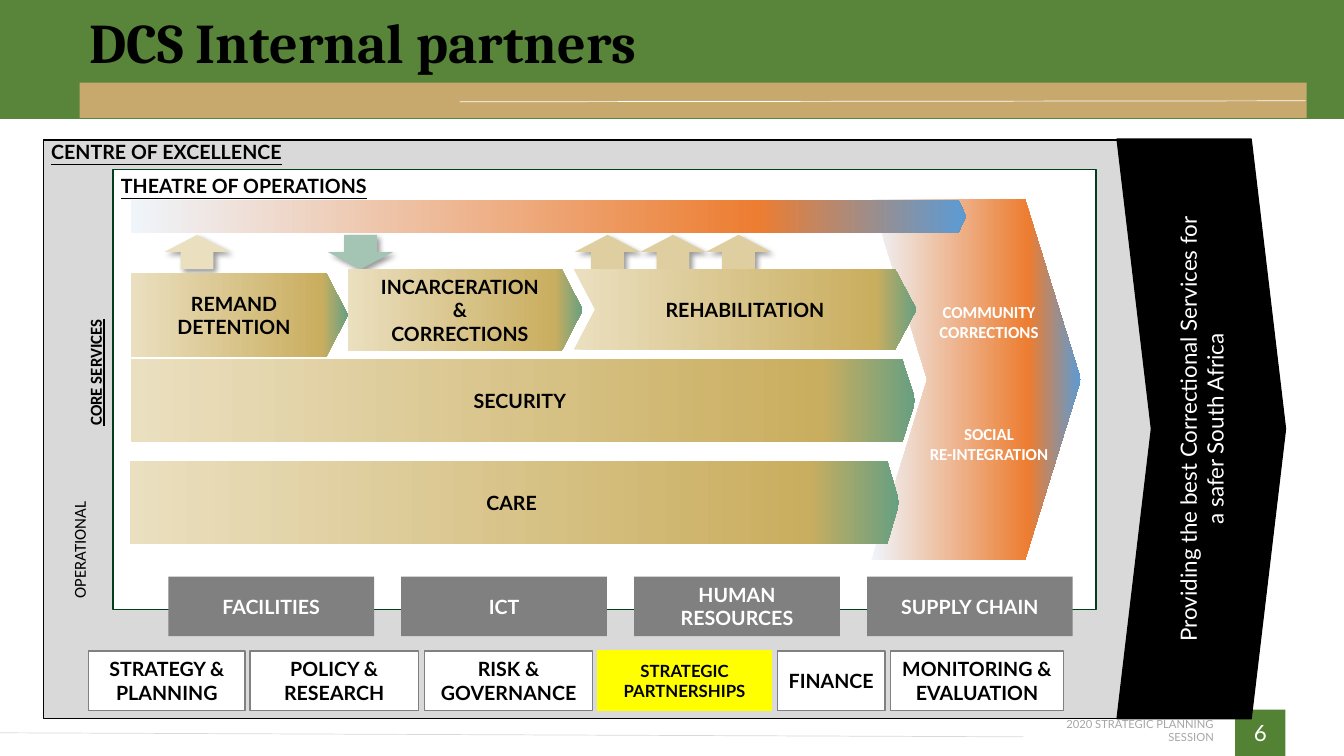
import copy
import lxml.etree
import pptx
import pptx.util
import pptx.dml.color
import pptx.enum.shapes
import pptx.enum.text
import pptx.oxml
import pptx.oxml.ns

RGB = pptx.dml.color.RGBColor
Pt = pptx.util.Pt
MSO = pptx.enum.shapes.MSO_SHAPE
ALIGN = pptx.enum.text.PP_ALIGN
ANCHOR = pptx.enum.text.MSO_ANCHOR
qn = pptx.oxml.ns.qn

BLACK = RGB(0x00, 0x00, 0x00)
WHITE = RGB(0xFF, 0xFF, 0xFF)
YELLOW = RGB(0xFF, 0xFF, 0x00)
GREY = RGB(0x80, 0x80, 0x80)
SILVER = RGB(0xD9, 0xD9, 0xD9)
FOOTER = RGB(0xA6, 0xA6, 0xA6)
GREEN = RGB(0x54, 0x82, 0x35)
BAND = RGB(0x58, 0x85, 0x39)
FOREST = RGB(0x00, 0x3E, 0x1D)
TAN = RGB(0xC7, 0xA9, 0x6E)
CREAM = RGB(0xEA, 0xDF, 0xBF)
SAND = RGB(0xDF, 0xCE, 0x9F)
SAGE = RGB(0xA4, 0xC5, 0xB3)
GOLD = [(0, CREAM), (0.88, RGB(0xCA, 0xAE, 0x5F)), (1, RGB(0x67, 0x9F, 0x81))]
FLAME = [(0, RGB(0xEF, 0xF5, 0xFB)), (0.75, RGB(0xED, 0x7D, 0x31)), (1, RGB(0x5B, 0x9B, 0xD5))]

prs = pptx.Presentation()
prs.slide_width = pptx.util.Inches(13.33)
prs.slide_height = pptx.util.Inches(7.5)
COL = prs.slide_width / 133.3
ROW = prs.slide_height / 75
s = prs.slides.add_slide(prs.slide_layouts[6])


def add_box(kind, x, y, w, h, fill=None, line=None, adj=None):
    box = [round(v) for v in (x * COL, y * ROW, w * COL, h * ROW)]
    if kind is None:
        return s.shapes.add_textbox(*box)
    sp = s.shapes.add_shape(kind, *box)
    sp.shadow.inherit = False
    if adj is not None:
        sp.adjustments[0] = adj
    if isinstance(fill, list):
        sp.fill.gradient()
        sp.fill.gradient_angle = 0
        stops = sp._element.spPr.find('.//' + qn('a:gsLst'))
        stops.append(copy.deepcopy(stops[-1]))
        for stop, (position, color) in zip(sp.fill.gradient_stops, fill):
            stop.position = position
            stop.color.rgb = color
    else:
        sp.fill.solid()
        sp.fill.fore_color.rgb = fill
    if line is None:
        sp.line.fill.background()
    else:
        sp.line.color.rgb = line
        sp.line.width = Pt(1)
    return sp


def write(sp, text, size=14, color=BLACK, name='Lato', bold=True, underline=None,
          align=ALIGN.CENTER, anchor=ANCHOR.MIDDLE):
    tf = sp.text_frame
    tf.word_wrap = True
    tf.vertical_anchor = anchor
    for i, words in enumerate(text.split('\n')):
        p = tf.add_paragraph() if i else tf.paragraphs[0]
        p.alignment = align
        r = p.add_run()
        r.text = words
        r.font.color.rgb = color
        style = {'size': Pt(size), 'name': name, 'bold': bold, 'underline': underline}
        for key, value in style.items():
            setattr(r.font, key, value)
    return tf


write(add_box(MSO.RECTANGLE, 122.5, 70.4, 5, 4.6, GREEN), '6', 16, WHITE, bold=False)
tf = write(add_box(None, 101.5, 71.8, 18.9, 1.3), '2020 STRATEGIC PLANNING SESSION', 8, FOOTER,
           bold=False, align=ALIGN.RIGHT)
for side in ('left', 'top', 'right', 'bottom'):
    setattr(tf, 'margin_' + side, 0)

add_box(MSO.RECTANGLE, 0, 0, 133.3, 11.8, BAND)
add_box(MSO.ROUNDED_RECTANGLE, 7.9, 8.2, 121.7, 3.5, TAN, adj=0)
for x1, y1, x2, y2, color in ((101.5, 73.1, 0, 72.7, SILVER), (45.6, 10.1, 129.5, 10, WHITE)):
    rule = s.shapes.add_connector(pptx.enum.shapes.MSO_CONNECTOR.STRAIGHT, round(x1 * COL),
                                  round(y1 * ROW), round(x2 * COL), round(y2 * ROW))
    rule.line.color.rgb = color
    rule.line.width = Pt(0.5)
    lxml.etree.SubElement(rule._element.spPr, qn('a:effectLst'))
tf = write(add_box(None, 7.9, 0, 119.6, 9), 'DCS Internal partners', 40, name='Cambria', align=ALIGN.LEFT)
tf.paragraphs[0].line_spacing = 0.9

add_box(MSO.RECTANGLE, 4.3, 13.9, 109.9, 57.4, SILVER, BLACK)
for x, w, text, size, fill, line in (
        (8.8, 15.5, 'STRATEGY & PLANNING', 14, WHITE, GREY),
        (24.8, 16.7, 'POLICY & RESEARCH', 14, WHITE, GREY),
        (42.1, 16.7, 'RISK & GOVERNANCE', 14, WHITE, GREY),
        (59.3, 17.2, 'STRATEGIC PARTNERSHIPS', 12, YELLOW, YELLOW),
        (77.1, 10.7, 'FINANCE', 14, WHITE, GREY),
        (88.3, 17.2, 'MONITORING & EVALUATION', 14, WHITE, GREY)):
    write(add_box(MSO.RECTANGLE, x, 64.6, w, 5.9, fill, line), text, size)

add_box(MSO.RECTANGLE, 11.2, 16.8, 97.5, 43.7, WHITE, FOREST)
for i, text in enumerate(('FACILITIES', 'ICT', 'HUMAN RESOURCES', 'SUPPLY CHAIN')):
    write(add_box(MSO.RECTANGLE, 16.7 + 23.1 * i, 57.2, 20.4, 5.9, GREY), text, color=WHITE)
for x, y, text, align in ((4.1, 13.4, 'CENTRE OF EXCELLENCE', ALIGN.LEFT),
                          (9.9, 16.8, 'THEATRE OF OPERATIONS', ALIGN.CENTER)):
    write(add_box(None, x, y, 28.6, 3.4), text, underline=True, align=align, anchor=ANCHOR.TOP)

tf = write(add_box(MSO.CHEVRON, 110.8, 13.8, 16.7, 57.5, BLACK, BLACK, 0.204),
           'Providing the best Correctional Services for\na safer South Africa', 16, WHITE, bold=False)
tf._txBody.bodyPr.set('vert', 'vert270')
for x, y, w, h, text, bold, align in (
        (-4.2, 35.7, 27.3, 2.5, 'CORE SERVICES', True, ALIGN.CENTER),
        (0.9, 50.6, 13.9, 5.6, 'OPERATIONAL', False, ALIGN.LEFT)):
    sp = add_box(None, x, y, w, h)
    sp.rotation = 270
    write(sp, text, 12, name='Calibri', bold=bold, underline=bold, align=align)

add_box(MSO.CHEVRON, 86.4, 19.7, 20.8, 35.9, FLAME, adj=0.267)
add_box(MSO.PENTAGON, 13, 19.8, 82.8, 3.3, FLAME, adj=0.229)
tf = write(add_box(None, 90.6, 29.4, 15, 17.2), 'COMMUNITY CORRECTIONS\nSOCIAL\nRE-INTEGRATION',
           12, WHITE, 'Calibri', anchor=ANCHOR.TOP)
tf.paragraphs[1].space_before = Pt(58.6)

for x, color, turn in ((16.3, CREAM, 0), (32.5, SAGE, 180), (57, SAND, 0), (63.5, SAND, 0), (70, SAND, 0)):
    sp = add_box(MSO.UP_ARROW, x, 23.3, 6.5, 3.4, color)
    sp.rotation = turn
    effects = sp._element.spPr.find(qn('a:effectLst'))
    effects.append(pptx.oxml.parse_xml(
        '<a:outerShdw xmlns:a="http://schemas.openxmlformats.org/drawingml/2006/main" '
        'blurRad="50800" dist="38100" dir="2700000" algn="tl" rotWithShape="0">'
        '<a:srgbClr val="000000"><a:alpha val="40000"/></a:srgbClr></a:outerShdw>'))

for kind, x, y, w, h, adj, text in (
        (MSO.PENTAGON, 34.5, 26.7, 23.3, 8.1, 0.259, 'INCARCERATION\n&\nCORRECTIONS'),
        (MSO.CHEVRON, 56.9, 26.7, 34, 8, 0.267, 'REHABILITATION'),
        (MSO.PENTAGON, 13, 35.6, 77.8, 8.3, 0.161, 'SECURITY'),
        (MSO.PENTAGON, 12.9, 45.7, 76.3, 8.3, 0.147, 'CARE'),
        (MSO.PENTAGON, 13, 27.1, 21.5, 8.3, 0.259, 'REMAND DETENTION')):
    write(add_box(kind, x, y, w, h, GOLD, adj=adj), text)

prs.save("out.pptx")
